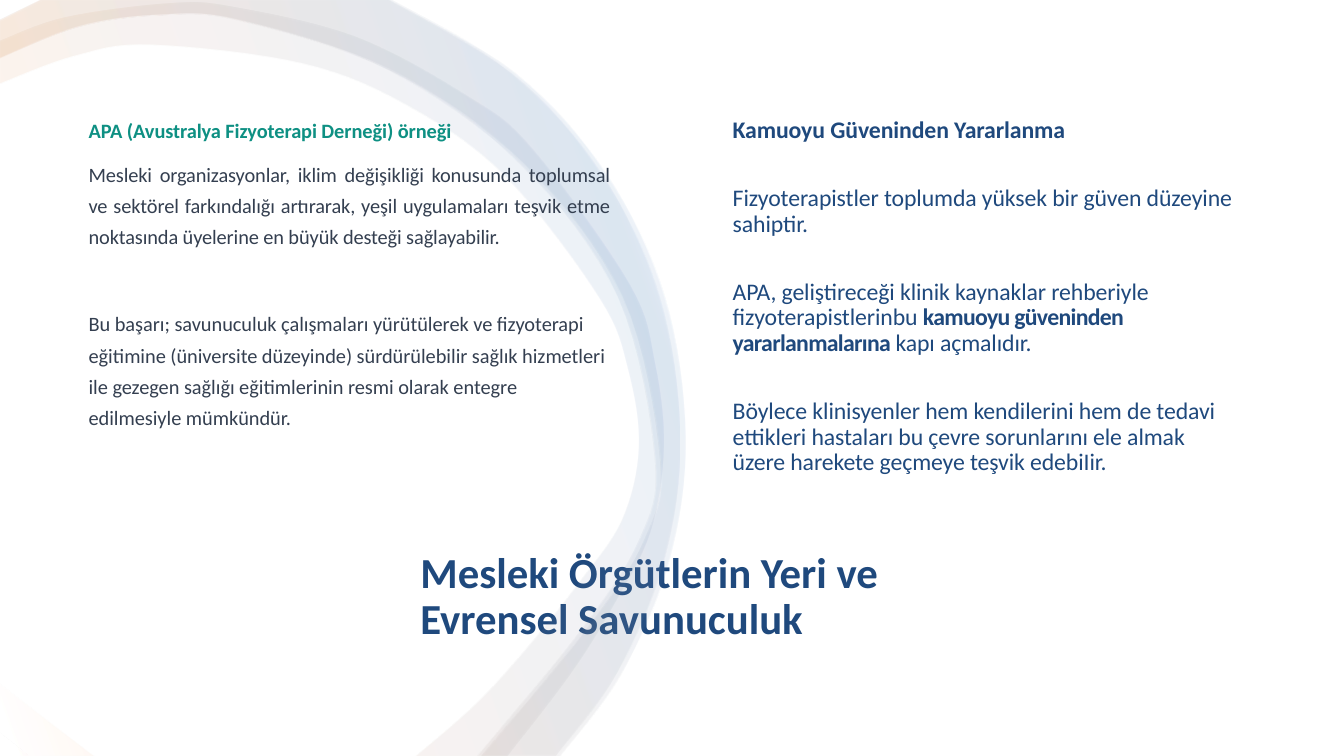
from pptx import Presentation
from pptx.dml.color import RGBColor
from pptx.enum.shapes import MSO_SHAPE
from pptx.enum.text import MSO_ANCHOR, PP_ALIGN
from pptx.oxml import parse_xml
from pptx.oxml.ns import nsdecls
from pptx.util import Inches, Pt

WHITE = RGBColor(0xFF, 0xFF, 0xFF)
NAVY = RGBColor(0x1F, 0x49, 0x7D)
TEAL = RGBColor(0x0E, 0x90, 0x83)
SLATE = RGBColor(0x34, 0x3F, 0x50)
ORANGE = RGBColor(0xF7, 0x96, 0x46)
BLUE = RGBColor(0x4F, 0x81, 0xBD)
WIDE, HIGH = 21.99, 12.37


def add_run(para, text, size, color, bold=False, gap=0):
    """Add one run; gap is the letter spacing in points."""
    run = para.add_run()
    run.text = text
    run.font.name = "Calibri"
    run.font.size = Pt(size)
    run.font.bold = bold
    run.font.color.rgb = color
    if gap:
        run._r.get_or_add_rPr().set("spc", str(round(gap * 100)))


def smooth(knots, steps=8):
    """Draw a Catmull-Rom curve through the knots."""
    ends = [knots[0], *knots, knots[-1]]
    curve = [knots[0]]
    for a, b, c, d in zip(ends, ends[1:], ends[2:], ends[3:]):
        for i in range(1, steps + 1):
            t = i / steps
            curve.append(tuple(
                q + t / 2 * (r - p + t * (2 * p - 5 * q + 4 * r - s
                                          + t * (3 * (q - r) + s - p)))
                for p, q, r, s in zip(a, b, c, d)))
    return curve


deck = Presentation()
deck.slide_width = Inches(WIDE)
deck.slide_height = Inches(HIGH)
slide = deck.slides.add_slide(deck.slide_layouts[6])
shapes = slide.shapes

# White ground
ground = shapes.add_shape(MSO_SHAPE.RECTANGLE, 0, 0, Inches(WIDE), Inches(HIGH))
ground.shadow.inherit = False
ground.fill.solid()
ground.fill.fore_color.rgb = WHITE
ground.line.fill.background()

# Title
title = shapes.add_textbox(Inches(6.78), Inches(8.97), Inches(8.67), Inches(1.46))
title.text_frame.word_wrap = True
para = title.text_frame.paragraphs[0]
para.line_spacing = 0.9
add_run(para, "Mesleki Örgütlerin Yeri ve Evrensel Savunuculuk", 50.4, NAVY, True)

# Right column: each paragraph is a list of (text, bold)
trust = [
    [("Kamuoyu Güveninden Yararlanma", True)],
    [("Fizyoterapistler toplumda yüksek bir güven düzeyine sahiptir.", False)],
    [("APA, geliştireceği klinik kaynaklar rehberiyle fizyoterapistlerinbu ", False),
     ("kamuoyu güveninden yararlanmalarına ", True),
     ("kapı açmalıdır.", False)],
    [("Böylece klinisyenler hem kendilerini hem de tedavi ettikleri hastaları bu çevre "
      "sorunlarını ele almak üzere harekete geçmeye teşvik edebiIir.", False)],
]
right = shapes.add_textbox(Inches(11.89), Inches(2.52), Inches(8.67), Inches(5.75))
frame = right.text_frame
frame.word_wrap = True
frame.vertical_anchor = MSO_ANCHOR.BOTTOM
frame.margin_right = Inches(0.25)
frame.margin_bottom = Inches(0.48)
for i, runs in enumerate(trust):
    para = frame.add_paragraph() if i else frame.paragraphs[0]
    para.line_spacing = 0.9
    if i:
        para.space_before = Pt(50)
    for text, bold in runs:
        inline = bold and len(runs) > 1
        add_run(para, text, 28, NAVY, bold, -0.8 if inline else -0.1)

# Ring bands: lead is the straight start, rim runs down the outside, core back
# up the inside, and foot is the triangle (width, height) in the bottom corner
EDGE = -0.01
slim = {
    "lead": [],
    "rim": [(EDGE, 0.68), (1.07, 0.29), (2.78, 0.06), (3.82, 0.12), (5.82, 0.61),
            (7.63, 1.57), (8.7, 2.43), (10.3, 4.65), (10.72, 5.96), (10.86, 7.32),
            (10.64, 8.7), (10.01, 9.94), (9.3, 11.06), (8.29, HIGH)],
    "core": [(6.79, HIGH), (7.79, 11.5), (8.63, 10.58), (9.46, 9.54), (10.17, 8.51),
             (10.45, 7.32), (10.28, 6.06), (9.81, 4.88), (8.27, 2.89), (6.7, 1.75),
             (4.97, 1.05), (2.48, 0.74), (1.23, 0.92), (EDGE, 1.38)],
    "foot": (1.57, 1.2),
}
broad = {
    "lead": [(EDGE, 0.35), (0.69, 0)],
    "rim": [(6.33, 0), (8.36, 1.22), (9.82, 2.85), (10.77, 4.86), (11.11, 7.14),
            (10.85, 9.15), (10.08, 11.01), (9.08, HIGH)],
    "core": [(7.8, HIGH), (9.48, 10.33), (10.44, 8.84), (10.7, 7.52), (10.09, 4.87),
             (8.5, 2.7), (6.34, 1.16), (3.87, 0.34), (2.57, 0.26), (1.28, 0.45),
             (EDGE, 0.97)],
    "foot": (0.48, 0.38),
}
stops = "".join(
    f'<a:gs pos="{pos}000"><a:srgbClr val="{color}"><a:alpha val="10000"/></a:srgbClr></a:gs>'
    for pos, color in [(2, WHITE), (16, ORANGE), (85, BLUE), (100, WHITE)])
bands = []
for ring, scale, drop in [(slim, 1, 0), (broad, 1, 0), (broad, 1.01, -0.01)]:
    across, up = ring["foot"]
    foot = [(EDGE, HIGH - up), (EDGE, HIGH), (EDGE + across, HIGH)]
    arc = ring["lead"] + smooth(ring["rim"]) + smooth(ring["core"])
    foot, arc = [[(Inches(x * scale), Inches(y + drop)) for x, y in path]
                 for path in (foot, arc)]
    pen = shapes.build_freeform(*foot[0], scale=1.0)
    pen.add_line_segments(foot[1:], close=True)
    pen.move_to(*arc[0])
    pen.add_line_segments(arc[1:], close=True)
    band = pen.convert_to_shape()
    band.shadow.inherit = False
    band.line.fill.background()
    band.fill.gradient()
    plain = band._element.spPr.find("{*}gradFill")
    plain.getparent().replace(plain, parse_xml(
        f'<a:gradFill {nsdecls("a")} rotWithShape="1"><a:gsLst>{stops}</a:gsLst>'
        '<a:lin ang="20400000" scaled="0"/></a:gradFill>'))
    bands.append(band)
shapes.add_group_shape(bands)

# Left column: text, colour, bold, alignment, line spacing, space before, letter gap
case = [
    ("APA (Avustralya Fizyoterapi Derneği) örneği",
     TEAL, True, PP_ALIGN.JUSTIFY, 1.0, 0, -0.1),
    ("Mesleki organizasyonlar, iklim değişikliği konusunda toplumsal ve sektörel "
     "farkındalığı artırarak, yeşil uygulamaları teşvik etme noktasında üyelerine en "
     "büyük desteği sağlayabilir.",
     SLATE, False, PP_ALIGN.JUSTIFY, 1.27, 15.2, -0.15),
    ("Bu başarı; savunuculuk çalışmaları yürütülerek ve fizyoterapi eğitimine "
     "(üniversite düzeyinde) sürdürülebilir sağlık hizmetleri ile gezegen sağlığı "
     "eğitimlerinin resmi olarak entegre edilmesiyle mümkündür.",
     SLATE, False, PP_ALIGN.LEFT, 1.27, 66, -0.05),
]
left = shapes.add_textbox(Inches(1.43), Inches(1.93), Inches(8.6), Inches(5.11))
frame = left.text_frame
frame.word_wrap = True
frame.margin_left = Inches(0.02)
frame.margin_top = Inches(0.01)
frame.margin_right = Inches(0.05)
frame.margin_bottom = 0
for i, (text, color, bold, align, line, before, gap) in enumerate(case):
    para = frame.add_paragraph() if i else frame.paragraphs[0]
    para.alignment = align
    para.line_spacing = line
    if before:
        para.space_before = Pt(before)
    add_run(para, text, 24, color, bold, gap)

deck.save("out.pptx")
